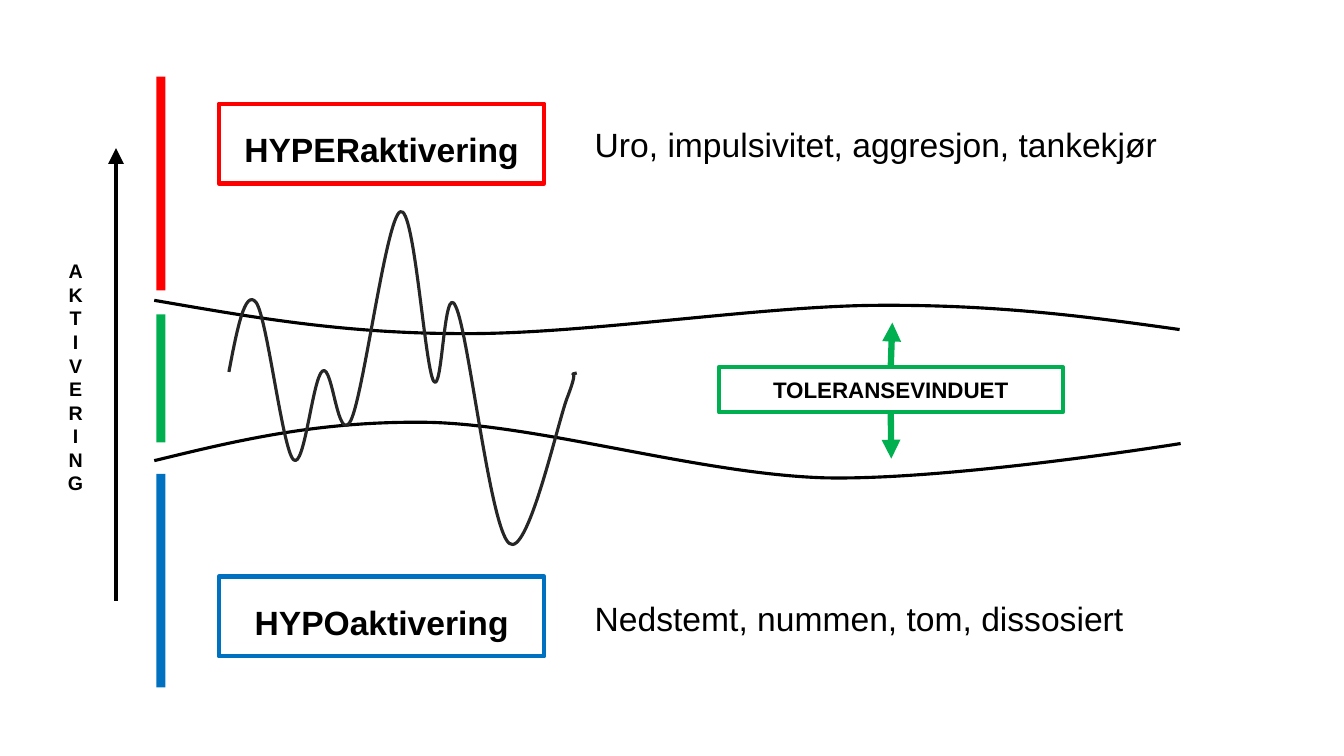
from dataclasses import dataclass, field

from lxml import etree
from pptx import Presentation
from pptx import util as u
from pptx.dml.color import RGBColor
from pptx.enum import shapes, text
from pptx.oxml.ns import qn

BLACK = RGBColor(0x00, 0x00, 0x00)
WHITE = RGBColor(0xFF, 0xFF, 0xFF)
RED = RGBColor(0xFF, 0x00, 0x00)
GREEN = RGBColor(0x00, 0xB0, 0x50)
BLUE = RGBColor(0x00, 0x70, 0xC0)
CHARCOAL = RGBColor(0x26, 0x26, 0x26)
FONT = "Arial"

Point = tuple[float, float]


@dataclass
class Zone:
    """A coloured stretch of the activation scale."""
    color: RGBColor
    top: float
    height: float


@dataclass
class State:
    """A framed state with its symptoms to the right."""
    name: str
    symptoms: str
    color: RGBColor
    top: float
    symptoms_top: float


@dataclass
class Curve:
    """A start, then two controls and an end per Bézier segment, then straight ends."""
    color: RGBColor
    points: list[Point]
    straight: list[Point] = field(default_factory=list)


ZONES = [Zone(RED, 0.76, 2.12), Zone(GREEN, 3.12, 1.27), Zone(BLUE, 4.7, 2.12)]

STATES = [
    State("HYPERaktivering", "Uro, impulsivitet, aggresjon, tankekjør", RED, 1.03, 1.18),
    State("HYPOaktivering", "Nedstemt, nummen, tom, dissosiert", BLUE, 5.72, 5.88),
]

CURVES = [
    Curve(BLACK, [
        (1.53, 4.57), (2.35, 4.37), (3.17, 4.17), (4.27, 4.19),
        (5.38, 4.22), (6.94, 4.7), (8.17, 4.74),
        (9.41, 4.77), (11.71, 4.4), (11.71, 4.4)]),
    Curve(BLACK, [
        (1.53, 2.98), (2.46, 3.14), (3.39, 3.31), (4.58, 3.31),
        (5.77, 3.32), (7.5, 3.04), (8.68, 3.03),
        (9.87, 3.02), (10.78, 3.14), (11.7, 3.27)]),
    Curve(CHARCOAL, [
        (2.27, 3.69), (2.35, 3.27), (2.43, 2.86), (2.54, 3),
        (2.65, 3.15), (2.8, 4.45), (2.91, 4.56),
        (3.02, 4.67), (3.1, 3.74), (3.2, 3.68),
        (3.3, 3.61), (3.35, 4.43), (3.48, 4.17),
        (3.61, 3.9), (3.83, 2.16), (3.97, 2.1),
        (4.11, 2.03), (4.21, 3.62), (4.3, 3.78),
        (4.39, 3.93), (4.4, 2.77), (4.52, 3.04),
        (4.65, 3.31), (4.86, 5.24), (5.05, 5.39),
        (5.23, 5.54), (5.52, 4.24), (5.62, 3.96),
        (5.73, 3.68), (5.68, 3.71), (5.68, 3.71)],
        straight=[(5.72, 3.7)]),
]


def write(sp, words: str, size: float, bold: bool = False, align=text.PP_ALIGN.LEFT,
          anchor=text.MSO_ANCHOR.TOP):
    """Set one formatted paragraph and return it."""
    tf = sp.text_frame
    tf.text = words
    tf.word_wrap = True
    tf.vertical_anchor = anchor
    p = tf.paragraphs[0]
    p.alignment = align
    font = p.runs[0].font
    font.name, font.size, font.bold = FONT, u.Pt(size), bold
    font.color.rgb = BLACK
    return p


def add_rect(s, left: float, top: float, width: float, height: float,
             fill: RGBColor, outline: RGBColor | None = None):
    sp = s.shapes.add_shape(shapes.MSO_SHAPE.RECTANGLE, u.Inches(left), u.Inches(top),
                            u.Inches(width), u.Inches(height))
    sp.shadow.inherit = False
    sp.fill.solid()
    sp.fill.fore_color.rgb = fill
    if outline is None:
        sp.line.fill.background()
    else:
        sp.line.color.rgb = outline
        sp.line.width = u.Pt(3)
    return sp


def add_text_box(s, left: float, top: float, width: float, height: float):
    return s.shapes.add_textbox(u.Inches(left), u.Inches(top),
                                u.Inches(width), u.Inches(height))


def add_arrow(s, start: Point, end: Point, color: RGBColor, weight: float,
              tip: str = "a:tailEnd", size: str = "med"):
    """Draw a straight arrow; tip a:tailEnd points at end, a:headEnd at start."""
    arrow = s.shapes.add_connector(shapes.MSO_CONNECTOR.STRAIGHT,
                                   *map(u.Inches, start + end))
    arrow.line.color.rgb = color
    arrow.line.width = u.Pt(weight)
    etree.SubElement(arrow.line._get_or_add_ln(), qn(tip),
                     type="triangle", w=size, len=size)
    etree.SubElement(arrow._element.spPr, qn("a:effectLst"))
    return arrow


def add_curve(s, curve: Curve) -> None:
    """Outline the segment ends, then bend each segment with its two controls."""
    start, *rest = curve.points
    ends = rest[2::3] + curve.straight
    builder = s.shapes.build_freeform(*map(u.Inches, start))
    builder.add_line_segments([(u.Inches(x), u.Inches(y)) for x, y in ends], close=False)
    sp = builder.convert_to_shape()
    lines = list(sp._element.iter(qn("a:lnTo")))
    for i, line in zip(range(0, len(rest), 3), lines):
        bend = etree.Element(qn("a:cubicBezTo"))
        for x, y in rest[i:i + 3]:
            etree.SubElement(bend, qn("a:pt"), x=str(u.Inches(x) - sp.left),
                             y=str(u.Inches(y) - sp.top))
        line.getparent().replace(line, bend)
    sp.shadow.inherit = False
    sp.fill.background()
    sp.line.color.rgb = curve.color
    sp.line.width = u.Pt(2.25)


def add_state(s, state: State) -> None:
    sp = add_rect(s, 2.17, state.top, 3.23, 0.79, WHITE, state.color)
    write(sp, state.name, 24, True, text.PP_ALIGN.CENTER).line_spacing = 1.5
    write(add_text_box(s, 5.8, state.symptoms_top, 6.22, 0.79), state.symptoms, 24)


def add_activation_axis(s) -> None:
    add_arrow(s, (1.15, 1.47), (1.15, 5.96), BLACK, 2.25, "a:headEnd", "lg")
    for zone in ZONES:
        add_rect(s, 1.55, zone.top, 0.09, zone.height, zone.color)
    sp = add_text_box(s, 0.52, 2.34, 0.46, 2.8)
    write(sp, "AKTIVERING", 14, True, text.PP_ALIGN.CENTER, text.MSO_ANCHOR.BOTTOM)
    sp.text_frame.auto_size = text.MSO_AUTO_SIZE.SHAPE_TO_FIT_TEXT
    sp.text_frame._txBody.bodyPr.set("vert", "wordArtVert")


def add_tolerance_window(s) -> None:
    sp = add_rect(s, 7.13, 3.64, 3.41, 0.45, WHITE, GREEN)
    p = write(sp, "TOLERANSEVINDUET", 16, True, text.PP_ALIGN.CENTER,
              text.MSO_ANCHOR.MIDDLE)
    p.space_before = u.Pt(6)
    for side, start_y, end in ((0, 3.64, (8.85, 3.2)), (2, 4.09, (8.84, 4.55))):
        add_arrow(s, (8.84, start_y), end, GREEN, 4.5).begin_connect(sp, side)


def main() -> None:
    prs = Presentation()
    prs.slide_width, prs.slide_height = u.Inches(13.33), u.Inches(7.5)
    s = prs.slides.add_slide(prs.slide_layouts[6])
    add_activation_axis(s)
    for state in STATES:
        add_state(s, state)
    add_tolerance_window(s)
    for curve in CURVES:
        add_curve(s, curve)
    prs.save("out.pptx")


if __name__ == "__main__":
    main()
